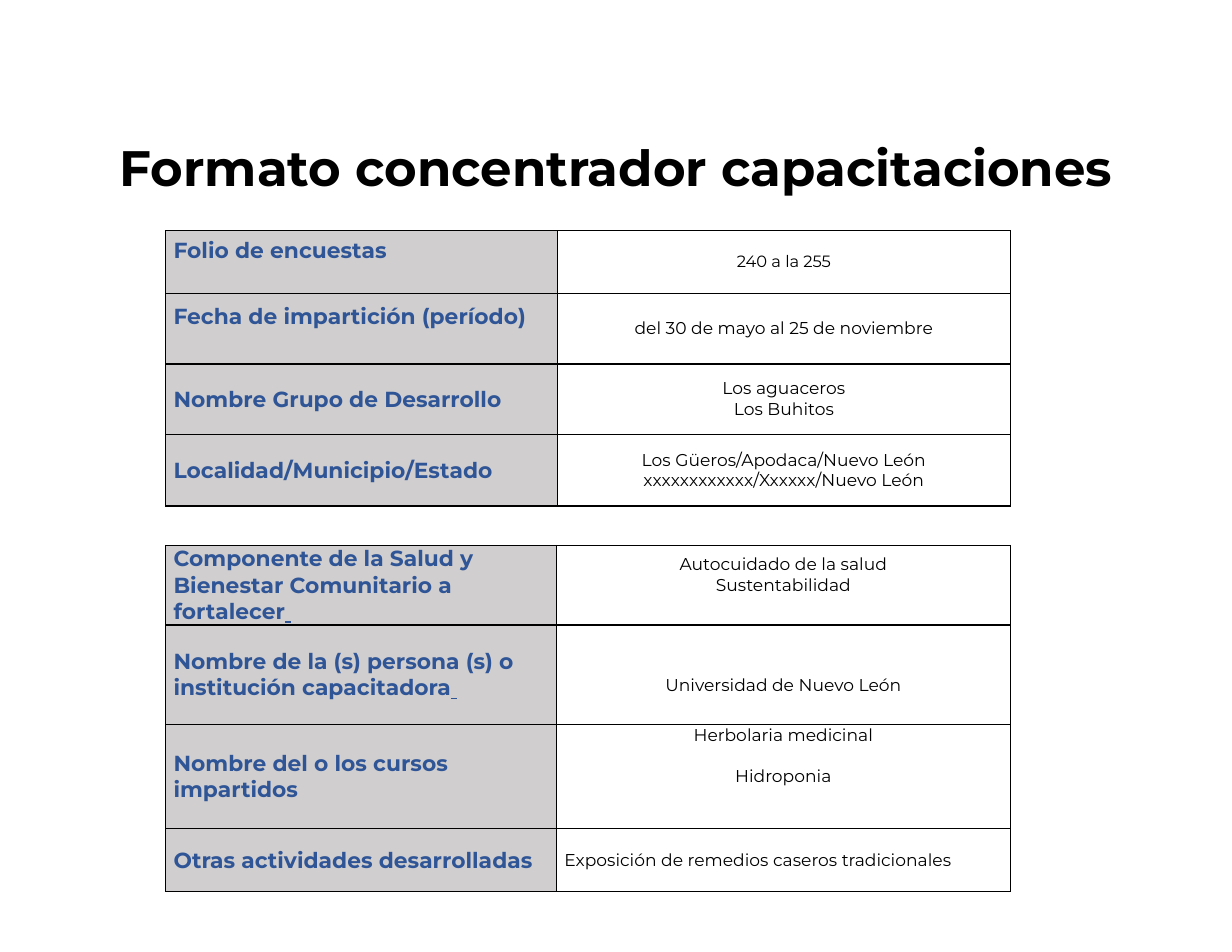
from lxml import etree
from pptx import Presentation
from pptx import util as u
from pptx.dml.color import RGBColor
from pptx.enum import text
from pptx.oxml import ns


def color(value):
    return RGBColor.from_string(value)


class Sheet:
    font = "Montserrat"
    ink = "000000"
    label_ink = "2F5597"
    label_fill = "D0CECE"
    side = 0.07

    def __init__(self, slide):
        self.slide = slide

    def run(self, paragraph, words, size, ink, bold=False, underline=False):
        run = paragraph.add_run()
        run.text = words
        run.font.name = self.font
        run.font.size = u.Pt(size)
        run.font.bold = bold
        run.font.color.rgb = color(ink)
        if underline:
            run.font.underline = True

    def title(self, words, left, top, width, height):
        heading = self.slide.shapes.title
        heading.left, heading.top = u.Inches(left), u.Inches(top)
        heading.width, heading.height = u.Inches(width), u.Inches(height)
        frame = heading.text_frame
        frame.word_wrap = True
        frame.auto_size = text.MSO_AUTO_SIZE.NONE
        frame.vertical_anchor = text.MSO_ANCHOR.MIDDLE
        paragraph = frame.paragraphs[0]
        paragraph.alignment = text.PP_ALIGN.CENTER
        paragraph.line_spacing = 0.9
        self.run(paragraph, words, 32, self.ink, True)

    def borders(self, cell):
        properties = cell._tc.get_or_add_tcPr()
        for index, edge in enumerate(("lnL", "lnR", "lnT", "lnB")):
            line = etree.Element(ns.qn(f"a:{edge}"), w=str(u.Pt(1)))
            fill = etree.SubElement(line, ns.qn("a:solidFill"))
            etree.SubElement(fill, ns.qn("a:srgbClr"), val=self.ink)
            properties.insert(index, line)

    def box(self, cell, top=0, bottom=0):
        cell.margin_left = cell.margin_right = u.Inches(self.side)
        cell.margin_top, cell.margin_bottom = u.Inches(top), u.Inches(bottom)
        cell.vertical_anchor = text.MSO_ANCHOR.MIDDLE
        self.borders(cell)

    def label(self, cell, words, bottom=0, tail=False):
        self.box(cell, bottom=bottom)
        cell.fill.solid()
        cell.fill.fore_color.rgb = color(self.label_fill)
        paragraph = cell.text_frame.paragraphs[0]
        self.run(paragraph, words, 14, self.label_ink, True)
        if tail:
            self.run(paragraph, " ", 14, self.label_ink, True, True)

    def answer(self, cell, lines, size=11, top=0, bottom=0, gap=0, centered=True):
        self.box(cell, top, bottom)
        cell.fill.background()
        frame = cell.text_frame
        for index, words in enumerate(lines):
            paragraph = frame.add_paragraph() if index else frame.paragraphs[0]
            if centered:
                paragraph.alignment = text.PP_ALIGN.CENTER
            if index and gap:
                paragraph.space_before = u.Pt(gap)
            self.run(paragraph, words, size, self.ink)

    def table(self, left, top, widths, heights, entries):
        frame = self.slide.shapes.add_table(
            len(entries), len(widths), u.Inches(left), u.Inches(top),
            u.Inches(sum(widths)), u.Inches(sum(heights)))
        grid = frame.table
        grid.first_row = grid.horz_banding = False
        for column, width in zip(grid.columns, widths):
            column.width = u.Inches(width)
        for index, (height, (label, answer)) in enumerate(zip(heights, entries)):
            grid.rows[index].height = u.Inches(height)
            self.label(grid.cell(index, 0), **label)
            self.answer(grid.cell(index, 1), **answer)


GROUP = [
    (dict(words="Folio de encuestas", bottom=0.2),
     dict(lines=["240 a la 255"], size=10.5)),
    (dict(words="Fecha de impartición (período)", bottom=0.22),
     dict(lines=["del 30 de mayo al 25 de noviembre"])),
    (dict(words="Nombre Grupo de Desarrollo"),
     dict(lines=["Los aguaceros", "Los Buhitos"])),
    (dict(words="Localidad/Municipio/Estado"),
     dict(lines=["Los Güeros/Apodaca/Nuevo León", "xxxxxxxxxxxx/Xxxxxx/Nuevo León"])),
]

TRAINING = [
    (dict(words="Componente de la Salud y Bienestar Comunitario a fortalecer", tail=True),
     dict(lines=["Autocuidado de la salud", "Sustentabilidad"], bottom=0.18)),
    (dict(words="Nombre de la (s) persona (s) o institución capacitadora", tail=True),
     dict(lines=["Universidad de Nuevo León"], top=0.19)),
    (dict(words="Nombre del o los cursos impartidos"),
     dict(lines=["Herbolaria medicinal", "Hidroponia"], bottom=0.37, gap=13)),
    (dict(words="Otras actividades desarrolladas"),
     dict(lines=["Exposición de remedios caseros tradicionales"], centered=False)),
]


def main():
    deck = Presentation()
    deck.slide_width, deck.slide_height = u.Inches(11), u.Inches(8.5)
    sheet = Sheet(deck.slides.add_slide(deck.slide_layouts[5]))
    sheet.title("Formato concentrador capacitaciones", 0.76, 1.17, 9.49, 0.71)
    sheet.table(1.48, 2.06, [3.5, 4.04], [0.56, 0.63, 0.63, 0.64], GROUP)
    sheet.table(1.48, 4.87, [3.49, 4.05], [0.71, 0.89, 0.93, 0.56], TRAINING)
    deck.save("out.pptx")


if __name__ == "__main__":
    main()
